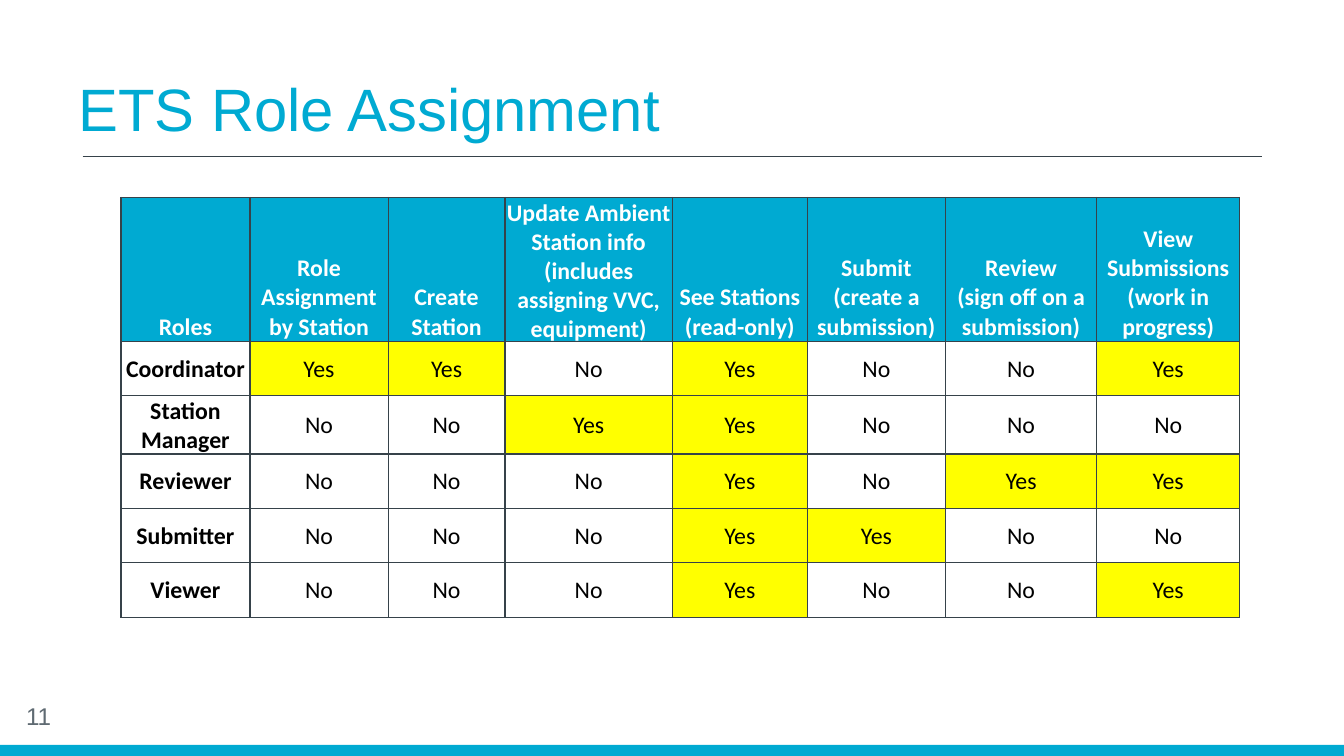
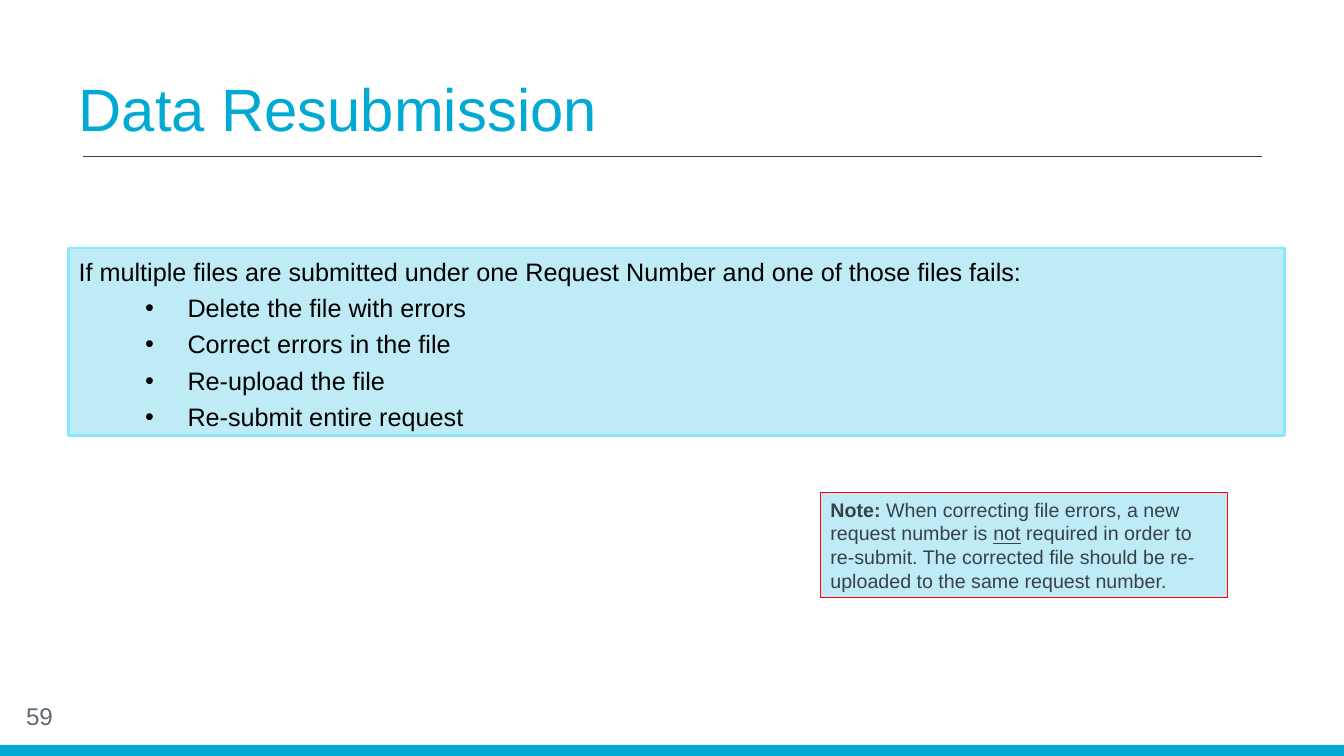
from lxml import etree
from pptx import Presentation, util as u
from pptx.dml.color import RGBColor
from pptx.enum import shapes, text
from pptx.oxml import ns

HUES = {
    "brand": "00AAD2", "dark": "36424A", "gray": "5F6A72", "pale": "BFEBF7",
    "edge": "87E8FF", "red": "FF0000", "mark": "FFFF00", "white": "FFFFFF",
    "black": "000000",
}
RGB = {name: RGBColor.from_string(code) for name, code in HUES.items()}
WIDE, HIGH = u.Inches(13.33), u.Inches(7.5)


def area(x, y, w, h):
    """Turn percentages of the slide's width and height into lengths."""
    return [int(side * part / 100) for side, part in zip((WIDE, HIGH) * 2, (x, y, w, h))]


def style(para, size, hue, face="Arial", bold=False):
    for run in para.runs:
        font = run.font
        font.name, font.size, font.bold = face, u.Pt(size), bold
        font.color.rgb = RGB[hue]


deck = Presentation()
deck.slide_width, deck.slide_height = WIDE, HIGH

# Title, rule, band and number on every slide
pages = []
for kind, head, num in ((5, "ETS Role Assignment", 11), (1, "Data Resubmission", 59)):
    page = deck.slides.add_slide(deck.slide_layouts[kind])
    pages.append(page)

    band = page.shapes.add_shape(shapes.MSO_SHAPE.RECTANGLE, *area(0, 98.53, 100, 1.47))
    band.shadow.inherit = False
    band.fill.solid()
    band.fill.fore_color.rgb = RGB["brand"]
    band.line.fill.background()

    rule = page.shapes.add_connector(shapes.MSO_CONNECTOR.STRAIGHT, *area(6.15, 20.67, 93.9, 20.67))
    rule.line.color.rgb = RGB["dark"]
    rule.line.width = u.Pt(0.75)
    etree.SubElement(rule.element.spPr, ns.qn("a:effectLst"))

    title = page.shapes.title
    title.left, title.top, title.width, title.height = area(5.1, 8.53, 89.85, 11.07)
    frame = title.text_frame
    frame.text = head
    frame.auto_size = text.MSO_AUTO_SIZE.NONE
    frame.vertical_anchor = text.MSO_ANCHOR.BOTTOM
    frame.paragraphs[0].alignment = text.PP_ALIGN.LEFT
    style(frame.paragraphs[0], 42.7, "brand")

    frame = page.shapes.add_textbox(*area(1.2, 92, 22.5, 5.33)).text_frame
    frame.text = str(num)
    frame.word_wrap = True
    frame.vertical_anchor = text.MSO_ANCHOR.MIDDLE
    style(frame.paragraphs[0], 17.3, "gray")

roles, resend = pages

# Slide 1: who may do what
HEADS = [
    "Roles", "Role Assignment by Station", "Create Station",
    "Update Ambient Station info\n(includes assigning VVC, equipment)",
    "See Stations\n(read-only)", "Submit\n(create a submission)",
    "Review\n(sign off on a submission)", "View Submissions (work in progress)",
]
RIGHTS = {  # numbers of the columns that hold "Yes"
    "Coordinator": (1, 2, 4, 7),
    "Station Manager": (3, 4),
    "Reviewer": (4, 6, 7),
    "Submitter": (4, 5),
    "Viewer": (4, 7),
}
COLS = [9.6, 10.28, 8.7, 12.45, 10.05, 10.28, 11.25, 10.65]
ROWS = [17.47] + [7.2] * len(RIGHTS)

cells = [HEADS]
for role, yes in RIGHTS.items():
    cells.append([role] + ["Yes" if c in yes else "No" for c in range(1, len(COLS))])

spot = area(9, 26.13, sum(COLS), sum(ROWS))
table = roles.shapes.add_table(len(ROWS), len(COLS), *spot).table
table.first_row = table.horz_banding = False
for col, part in zip(table.columns, COLS):
    col.width = int(WIDE * part / 100)
for row, part in zip(table.rows, ROWS):
    row.height = int(HIGH * part / 100)

for r, line in enumerate(cells):
    for c, word in enumerate(line):
        cell = table.cell(r, c)
        cell.text = word
        cell.margin_left = cell.margin_right = cell.margin_top = u.Inches(0.01)
        cell.margin_bottom = 0
        cell.vertical_anchor = text.MSO_ANCHOR.MIDDLE if r else text.MSO_ANCHOR.BOTTOM
        props = cell._tc.get_or_add_tcPr()
        for side in ("lnL", "lnR", "lnT", "lnB"):
            edge = etree.SubElement(props, ns.qn("a:" + side), w=str(u.Pt(1)))
            paint = etree.SubElement(edge, ns.qn("a:solidFill"))
            etree.SubElement(paint, ns.qn("a:srgbClr"), val=HUES["dark"])
        cell.fill.solid()
        hue = "brand" if r == 0 else "mark" if word == "Yes" else "white"
        cell.fill.fore_color.rgb = RGB[hue]
        for para in cell.text_frame.paragraphs:
            para.alignment = text.PP_ALIGN.CENTER
            style(para, 17, "black" if r else "white", "Calibri", r == 0 or c == 0)

# Slide 2: steps and note
STEPS = [
    "If multiple files are submitted under one Request Number and one of those files fails:",
    "Delete the file with errors",
    "Correct errors in the file",
    "Re-upload the file",
    "Re-submit entire request",
]
NOTE = [
    ("Note: ", True, False),
    ("When correcting file errors, a new request number is ", False, False),
    ("not", False, True),
    (" required in order to re-submit. The corrected file should be "
     "re-uploaded to the same request number.", False, False),
]

steps = resend.placeholders[1]
steps.left, steps.top, steps.width, steps.height = area(5.1, 32.8, 90.5, 24.8)
note = resend.shapes.add_shape(shapes.MSO_SHAPE.RECTANGLE, *area(61.05, 65.2, 30.3, 13.87))
note.shadow.inherit = False
for box, hue, width in ((steps, "edge", 2), (note, "red", 0.75)):
    box.fill.solid()
    box.fill.fore_color.rgb = RGB["pale"]
    box.line.color.rgb = RGB[hue]
    box.line.width = u.Pt(width)
    box.text_frame.word_wrap = True
    box.text_frame.auto_size = text.MSO_AUTO_SIZE.NONE
    box.text_frame.vertical_anchor = text.MSO_ANCHOR.TOP

frame = steps.text_frame
frame.margin_top = u.Inches(0.08)
frame.text = "\n".join(STEPS)
for i, para in enumerate(frame.paragraphs):
    props = para._p.get_or_add_pPr()
    props.set("marL", str(u.Inches(1.08) if i else 0))
    props.set("indent", str(u.Inches(-0.42) if i else 0))
    if i:
        para.level = 1
        etree.SubElement(props, ns.qn("a:buFont"), typeface="Arial")
        etree.SubElement(props, ns.qn("a:buChar"), char="•")
    else:
        etree.SubElement(props, ns.qn("a:buNone"))
    para.space_before = u.Pt(4.4 if i else 0)
    style(para, 18, "black")

para = note.text_frame.paragraphs[0]
para.alignment = text.PP_ALIGN.LEFT
for words, _, _ in NOTE:
    para.add_run().text = words
style(para, 14, "dark")
for run, (_, bold, under) in zip(para.runs, NOTE):
    run.font.bold, run.font.underline = bold, under

deck.save("out.pptx")
